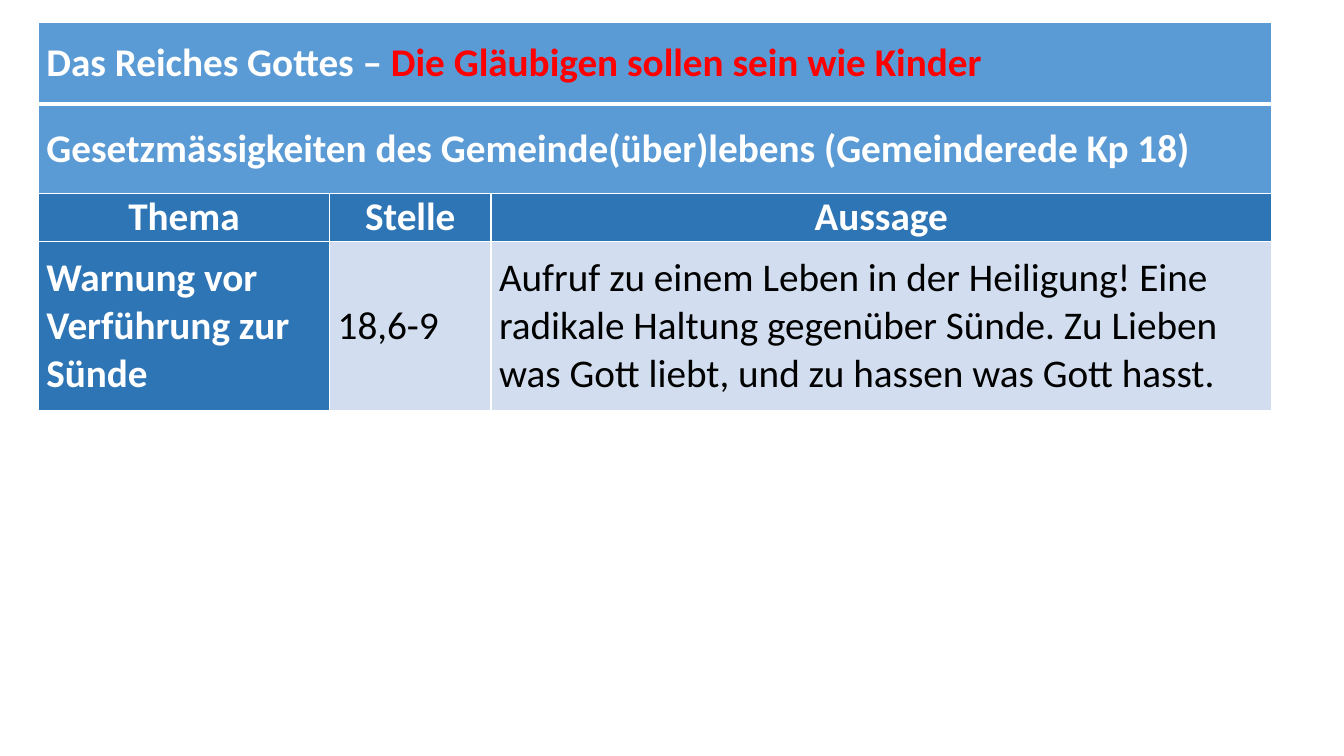
"""Build a slide with one table of Thema, Stelle and Aussage."""
from pptx import Presentation
from pptx.dml.color import RGBColor
from pptx.enum.text import MSO_ANCHOR, PP_ALIGN
from pptx.oxml import parse_xml
from pptx.oxml.ns import nsdecls
from pptx.util import Inches, Pt

WHITE = RGBColor(0xFF, 0xFF, 0xFF)
BLACK = RGBColor(0x00, 0x00, 0x00)
RED = RGBColor(0xFF, 0x00, 0x00)
BLUE = RGBColor(0x5B, 0x9B, 0xD5)
DARK_BLUE = RGBColor(0x2E, 0x75, 0xB6)
PALE_BLUE = RGBColor(0xD2, 0xDE, 0xEF)

COLUMN_WIDTHS = [2.89, 1.6, 7.74]
ROW_HEIGHTS = [0.81, 0.89, 0.4, 1.68]

CELLS = [
    (0, 0, [("Das Reiches Gottes – ", WHITE), ("Die Gläubigen sollen sein wie Kinder", RED)], BLUE),
    (1, 0, [("Gesetzmässigkeiten des Gemeinde(über)lebens (Gemeinderede Kp 18)", WHITE)], BLUE),
    (2, 0, [("Thema", WHITE)], DARK_BLUE),
    (2, 1, [("Stelle", WHITE)], DARK_BLUE),
    (2, 2, [("Aussage", WHITE)], DARK_BLUE),
    (3, 0, [("Warnung vor Verführung zur Sünde", WHITE)], DARK_BLUE),
    (3, 1, [("18,6-9", BLACK)], PALE_BLUE),
    (3, 2, [("Aufruf zu einem Leben in der Heiligung! Eine radikale Haltung gegenüber Sünde. "
             "Zu Lieben was Gott liebt, und zu hassen was Gott hasst.", BLACK)], PALE_BLUE),
]


def set_borders(cell, row):
    properties = cell._tc.get_or_add_tcPr()
    thick_side = {0: "lnB", 1: "lnT"}.get(row)
    for position, side in enumerate(("lnL", "lnR", "lnT", "lnB")):
        width = Pt(3 if side == thick_side else 1)
        properties.insert(position, parse_xml(
            f'<a:{side} {nsdecls("a")} w="{width}"><a:solidFill>'
            f'<a:srgbClr val="{WHITE}"/></a:solidFill></a:{side}>'))


presentation = Presentation()
presentation.slide_width = Inches(13.33)
presentation.slide_height = Inches(7.5)
slide = presentation.slides.add_slide(presentation.slide_layouts[6])

table = slide.shapes.add_table(
    len(ROW_HEIGHTS), len(COLUMN_WIDTHS), Inches(0.38), Inches(0.22),
    Inches(sum(COLUMN_WIDTHS)), Inches(sum(ROW_HEIGHTS))).table
table.horz_banding = False
for column, width in zip(table.columns, COLUMN_WIDTHS):
    column.width = Inches(width)
for row, height in zip(table.rows, ROW_HEIGHTS):
    row.height = Inches(height)
for title_row in (0, 1):
    table.cell(title_row, 0).merge(table.cell(title_row, 2))

for row_index in range(len(ROW_HEIGHTS)):
    for column_index in range(len(COLUMN_WIDTHS)):
        set_borders(table.cell(row_index, column_index), row_index)

for row_index, column_index, texts, fill_color in CELLS:
    cell = table.cell(row_index, column_index)
    cell.fill.solid()
    cell.fill.fore_color.rgb = fill_color
    cell.vertical_anchor = MSO_ANCHOR.MIDDLE
    cell.margin_left = cell.margin_right = Inches(0.08)
    cell.margin_top = cell.margin_bottom = Inches(0)
    paragraph = cell.text_frame.paragraphs[0]
    paragraph.alignment = PP_ALIGN.CENTER if row_index == 2 else PP_ALIGN.LEFT
    for text, color in texts:
        run = paragraph.add_run()
        run.text = text
        run.font.name = "Calibri"
        run.font.size = Pt(28)
        run.font.bold = color != BLACK
        run.font.color.rgb = color

presentation.save("out.pptx")
